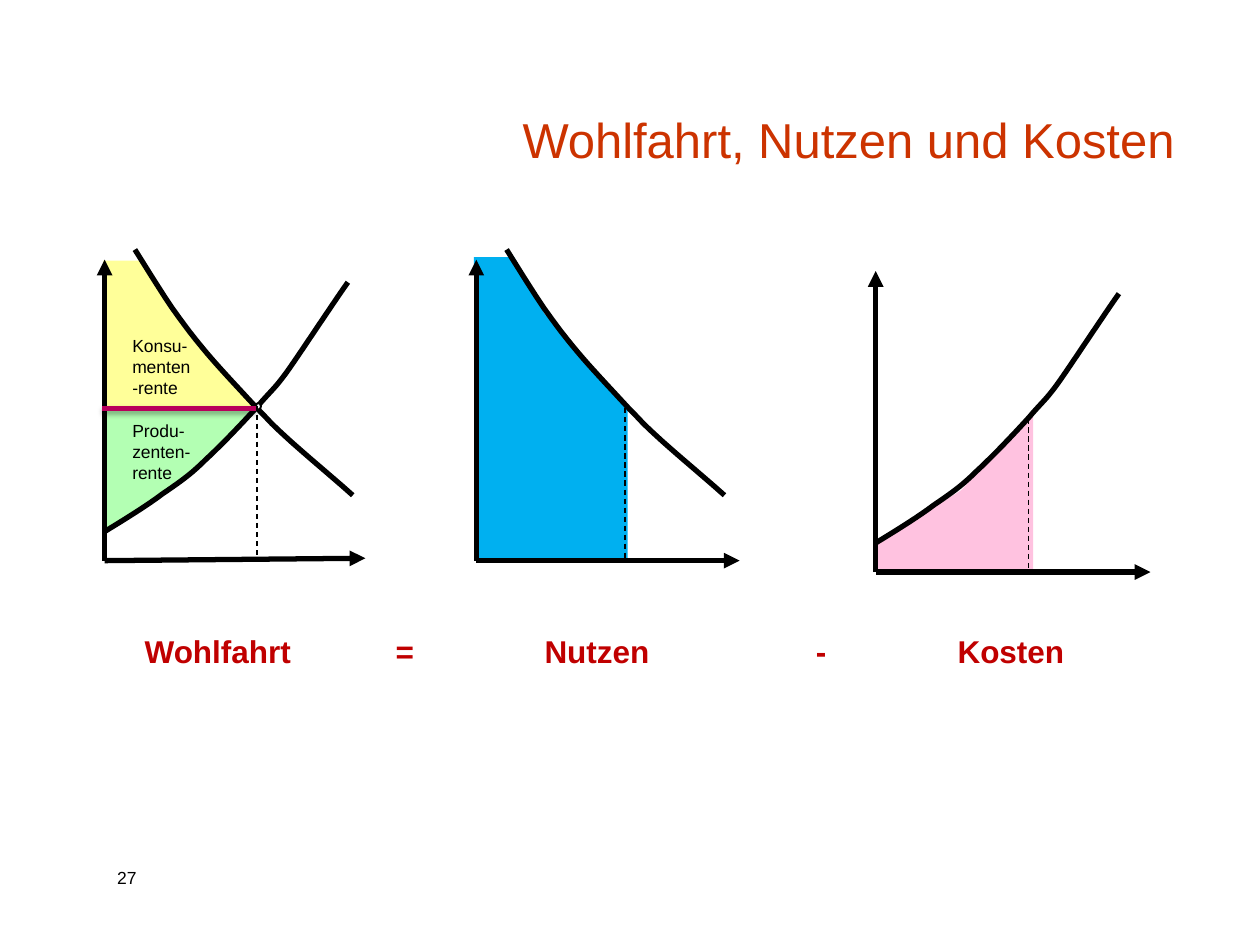
"""Build a slide that explains welfare as benefit minus cost with three market diagrams."""
from dataclasses import dataclass

from lxml.etree import SubElement
from pptx import Presentation
from pptx.dml.color import RGBColor
from pptx.enum.dml import MSO_LINE
from pptx.enum.shapes import MSO_CONNECTOR, MSO_SHAPE
from pptx.enum.text import MSO_ANCHOR, PP_ALIGN
from pptx.oxml.ns import qn
from pptx.util import Pt


@dataclass(frozen=True)
class Theme:
    font: str = "Arial"
    title: str = "CC3300"
    equation: str = "C00000"
    ink: str = "000000"
    paper: str = "FFFFFF"
    consumer: str = "FFFF99"
    producer: str = "B3FFB3"
    benefit: str = "00B0F0"
    cost: str = "FFC2E0"
    price: str = "B9005C"
    title_size: float = 28
    equation_size: float = 18
    small_size: float = 10
    heavy: float = 3
    thin: float = 0.75


THEME = Theme()
TITLE = "Wohlfahrt, Nutzen und Kosten"
PAGE_NUMBER = "27"
EQUATION = ["Wohlfahrt", "=", "Nutzen", "-", "Kosten"]
EQUATION_TABS = [143.4, 228.5, 383.5, 464.5]

DEMAND = [(17.3, 177.8), (20.9, 172.1), (32.4, 153.4), (38.9, 144),
          (46.1, 133.9), (50.4, 128.2), (58.3, 118.8),
          (66.2, 109.4), (79.9, 95), (87.1, 87.1),
          (95, 79.2), (93.6, 79.9), (103, 71.3),
          (112.3, 62.6), (133.9, 44.6), (141.8, 37.4)]
SUPPLY = [(0, 16.6), (5.8, 20.2), (23.8, 31), (33.1, 38.2),
          (42.5, 44.6), (49, 49), (57.6, 57.6),
          (67, 66.2), (79.9, 79.9), (87.8, 88.6),
          (95, 97.2), (97.2, 97.9), (105.8, 110.2),
          (113.8, 121.7), (131.8, 149), (139, 159.1)]
CONSUMER_AREA = [(-0.7, 87.1), (87.1, 87.1), (51.8, 126), (21.6, 171.4), (-0.7, 171.4)]
PRODUCER_AREA = [(-0.7, 87.1), (85, 87.1), (68.4, 69.1), (51.8, 50.4),
                 (21.6, 29.5), (-0.7, 17.3)]
BENEFIT_AREA = [(-1.4, 173.5), (21.6, 173.5), (38.9, 141.1), (86.4, 89.3),
                (86.4, 0), (0.7, 0)]
COST_AREA = [(90, 89.3), (90, 0.7), (0.7, 0.7), (0.7, 16.6), (49, 46.8), (73.4, 73.4)]

PANELS = [
    {"origin": (59.8, 320.4), "axis_end": (149, 1.4), "quantity": (87.1, 88.6, 1.4),
     "areas": [(CONSUMER_AREA, THEME.consumer), (PRODUCER_AREA, THEME.producer)],
     "labels": [("Konsu-menten-rente", 128.9), ("Produ-zenten-rente", 80.6)],
     "curves": [DEMAND, SUPPLY], "price": True},
    {"origin": (272.2, 320.4), "axis_end": (150.5, 0), "quantity": (85, 87.1, 0.7),
     "areas": [(BENEFIT_AREA, THEME.benefit)], "labels": [],
     "curves": [DEMAND], "price": False},
    {"origin": (500.4, 326.9), "axis_end": (157, 0), "quantity": (87.5, 87.8, 1.4),
     "areas": [(COST_AREA, THEME.cost)], "labels": [],
     "curves": [SUPPLY], "price": False},
]
AXIS_HEIGHT = 172


def rgb(value):
    return RGBColor.from_string(value)


def write_text(shape, text, size=THEME.small_size, color=THEME.ink, bold=False,
               align=PP_ALIGN.LEFT, anchor=MSO_ANCHOR.TOP, margins=(7.2, 3.6), tabs=()):
    frame = shape.text_frame
    frame.word_wrap = True
    frame.vertical_anchor = anchor
    frame.margin_left = frame.margin_right = Pt(margins[0])
    frame.margin_top = frame.margin_bottom = Pt(margins[1])
    paragraph = frame.paragraphs[0]
    paragraph.alignment = align
    paragraph.space_before = Pt(0)
    if tabs:
        tab_list = SubElement(paragraph._p.get_or_add_pPr(), qn("a:tabLst"))
        for position in tabs:
            SubElement(tab_list, qn("a:tab"), pos=str(Pt(position)), algn="l")
    run = paragraph.add_run()
    run.text = text
    run.font.name, run.font.size, run.font.bold = THEME.font, Pt(size), bold
    run.font.color.rgb = rgb(color)


def add_text(slide, box, text, **formatting):
    shape = slide.shapes.add_textbox(*map(Pt, box))
    write_text(shape, text, **formatting)


def place(origin, point):
    return Pt(origin[0] + point[0]), Pt(origin[1] - point[1])


def sample_curve(controls, steps=10):
    points = [controls[0]]
    for first in range(0, len(controls) - 1, 3):
        segment = controls[first:first + 4]
        for step in range(1, steps + 1):
            t = step / steps
            weights = ((1 - t) ** 3, 3 * t * (1 - t) ** 2, 3 * t ** 2 * (1 - t), t ** 3)
            points.append(tuple(sum(w * p[axis] for w, p in zip(weights, segment))
                                for axis in (0, 1)))
    return points


def add_outline(slide, origin, points, fill=None):
    places = [place(origin, point) for point in points]
    builder = slide.shapes.build_freeform(*places[0])
    builder.add_line_segments(places[1:], close=bool(fill))
    shape = builder.convert_to_shape()
    shape.shadow.inherit = False
    if fill:
        shape.fill.solid()
        shape.fill.fore_color.rgb = rgb(fill)
        shape.line.fill.background()
    else:
        shape.fill.background()
        shape.line.color.rgb = rgb(THEME.ink)
        shape.line.width = Pt(THEME.heavy)


def add_line(slide, origin, start, end, color=THEME.ink, width=THEME.heavy,
             arrow=False, dashed=False, shadow=False):
    connector = slide.shapes.add_connector(
        MSO_CONNECTOR.STRAIGHT, *place(origin, start), *place(origin, end))
    connector.line.color.rgb = rgb(color)
    connector.line.width = Pt(width)
    if dashed:
        connector.line.dash_style = MSO_LINE.DASH
    if arrow:
        SubElement(connector.line._get_or_add_ln(), qn("a:tailEnd"), type="triangle")
    effects = SubElement(connector._element.spPr, qn("a:effectLst"))
    if shadow:
        outer = SubElement(effects, qn("a:outerShdw"), blurRad=str(Pt(3.1)),
                           dist=str(Pt(1.8)), dir="5400000", rotWithShape="0")
        shade = SubElement(outer, qn("a:srgbClr"), val=THEME.ink)
        SubElement(shade, qn("a:alpha"), val="35000")


def add_equilibrium(slide, origin):
    left, top = place(origin, (86.4, 90))
    ring = slide.shapes.add_shape(MSO_SHAPE.OVAL, left, top, Pt(2.9), Pt(3.6))
    ring.shadow.inherit = False
    ring.fill.solid()
    ring.fill.fore_color.rgb = rgb(THEME.paper)
    ring.line.color.rgb = rgb(THEME.ink)
    ring.line.width = Pt(1.13)
    add_line(slide, origin, (86.4, 87.1), (-1.4, 87.1), color=THEME.price, shadow=True)


def add_panel(slide, panel):
    origin = panel["origin"]
    for points, fill in panel["areas"]:
        add_outline(slide, origin, points, fill)
    for text, height in panel["labels"]:
        add_text(slide, (origin[0] + 15.8, origin[1] - height, 36, 36.7), text, margins=(0, 0))
    for controls in panel["curves"]:
        add_outline(slide, origin, sample_curve(controls))
    for end in (panel["axis_end"], (0, AXIS_HEIGHT)):
        add_line(slide, origin, (0, 0), end, arrow=True)
    if panel["price"]:
        add_equilibrium(slide, origin)
    x, top, bottom = panel["quantity"]
    add_line(slide, origin, (x, top), (x, bottom), width=THEME.thin, dashed=True)


def main():
    presentation = Presentation()
    presentation.slide_width, presentation.slide_height = Pt(720), Pt(540)
    slide = presentation.slides.add_slide(presentation.slide_layouts[5])
    title = slide.shapes.title
    title.left, title.top, title.width, title.height = map(Pt, (150.5, 30.2, 527.8, 69.8))
    write_text(title, TITLE, size=THEME.title_size, color=THEME.title,
               align=PP_ALIGN.RIGHT, anchor=MSO_ANCHOR.BOTTOM)
    for panel in PANELS:
        add_panel(slide, panel)
    add_text(slide, (75.6, 357.8, 614.2, 51), "\t".join(EQUATION), size=THEME.equation_size,
             color=THEME.equation, bold=True, tabs=EQUATION_TABS)
    add_text(slide, (59.8, 491.8, 48, 19.4), PAGE_NUMBER)
    presentation.save("out.pptx")


if __name__ == "__main__":
    main()
